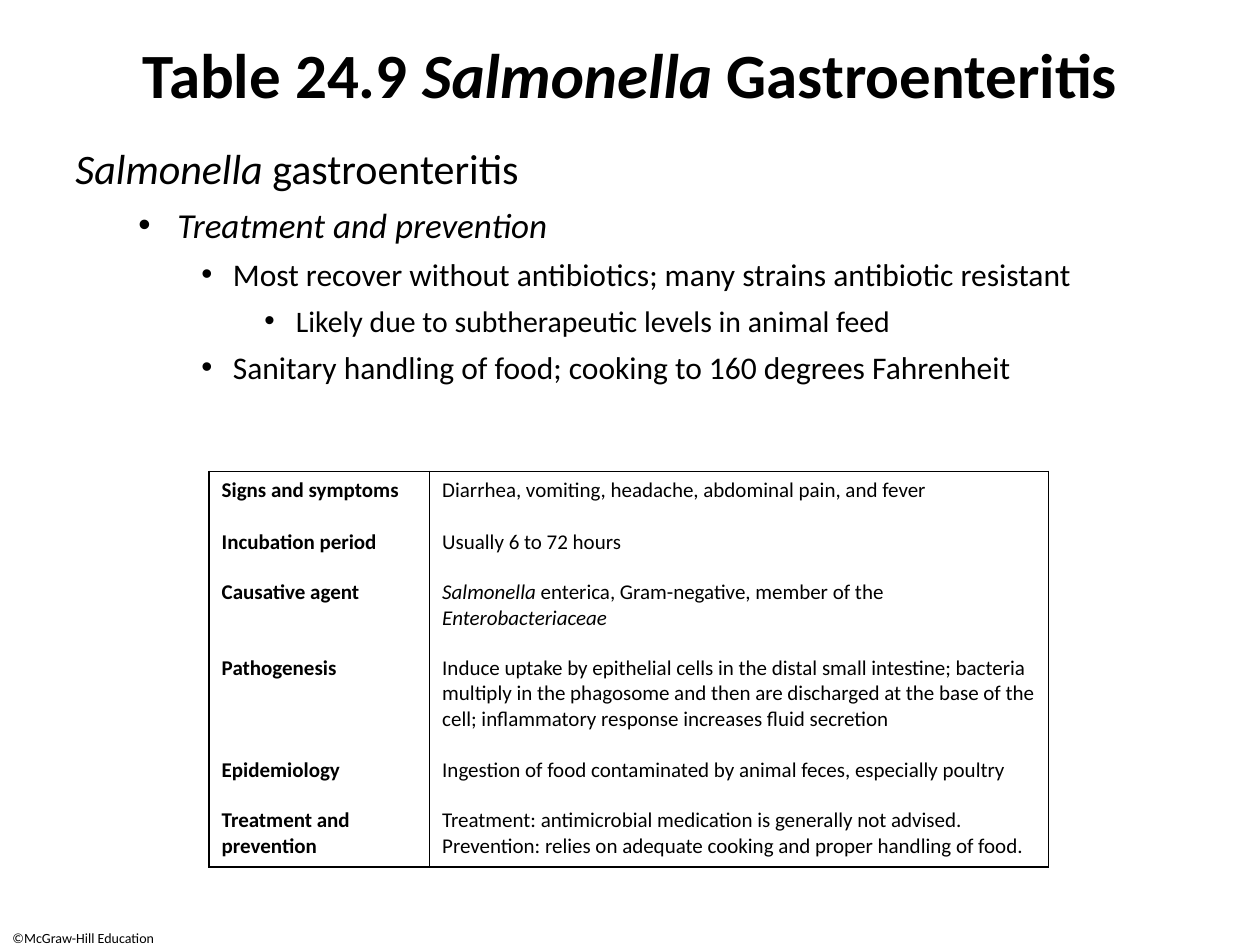
from lxml.etree import SubElement
from pptx import Presentation
from pptx.dml.color import RGBColor
from pptx.enum.text import MSO_ANCHOR, PP_ALIGN
from pptx.oxml.ns import qn
from pptx.util import Inches, Pt

FONT = "Calibri"
COLORS = {"text": "000000", "border": "000000", "background": "FFFFFF"}
LEVELS = [(24, 0, 0), (20, 0.81, -0.31), (18, 1.25, -0.25), (17, 1.75, -0.25)]

TITLE = [("Table 24.9 ", False), ("Salmonella", True), (" Gastroenteritis", False)]
OUTLINE = [
    (0, [("Salmonella", True), (" gastroenteritis", False)]),
    (1, [("Treatment and prevention", True)]),
    (2, [("Most recover without antibiotics; many strains antibiotic resistant", False)]),
    (3, [("Likely due to subtherapeutic levels in animal feed", False)]),
    (2, [("Sanitary handling of food; cooking to 160 degrees Fahrenheit", False)]),
]
COLUMN_WIDTHS = [1.75, 4.91]
ROWS = [
    (0.41, "Signs and symptoms",
     [("Diarrhea, vomiting, headache, abdominal pain, and fever", False)]),
    (0.4, "Incubation period", [("Usually 6 to 72 hours", False)]),
    (0.6, "Causative agent",
     [("Salmonella", True), (" enterica, Gram-negative, member of the ", False),
      ("Enterobacteriaceae", True)]),
    (0.81, "Pathogenesis",
     [("Induce uptake by epithelial cells in the distal small intestine; bacteria "
       "multiply in the phagosome and then are discharged at the base of the cell; "
       "inflammatory response increases fluid secretion", False)]),
    (0.4, "Epidemiology",
     [("Ingestion of food contaminated by animal feces, especially poultry", False)]),
    (0.52, "Treatment and prevention",
     [("Treatment: antimicrobial medication is generally not advised. "
       "Prevention: relies on adequate cooking and proper handling of food.", False)]),
]


def write(para, spans, size, bold=False):
    para.font.name = FONT
    para.font.size = Pt(size)
    para.font.bold = bold
    para.font.color.rgb = RGBColor.from_string(COLORS["text"])
    for text, italic in spans:
        span = para.add_run()
        span.text = text
        if italic:
            span.font.italic = True


def add_text_frame(page, box):
    frame = page.shapes.add_textbox(*map(Inches, box)).text_frame
    frame.word_wrap = True
    return frame


def place_title(page, box):
    title = page.shapes.title
    title.left, title.top, title.width, title.height = map(Inches, box)
    frame = title.text_frame
    frame.vertical_anchor = MSO_ANCHOR.MIDDLE
    para = frame.paragraphs[0]
    para.alignment = PP_ALIGN.CENTER
    write(para, TITLE, 36, bold=True)


def add_outline(page, box):
    frame = add_text_frame(page, box)
    for index, (level, spans) in enumerate(OUTLINE):
        para = frame.add_paragraph() if index else frame.paragraphs[0]
        size, margin, indent = LEVELS[level]
        para.level = level
        para.space_after = Pt(2)
        if index:
            para.space_before = Pt(round(size * 0.2, 1))
        if level:
            props = para._p.get_or_add_pPr()
            props.set("marL", str(Inches(margin)))
            props.set("indent", str(Inches(indent)))
            SubElement(props, qn("a:buFont"), typeface="Arial")
            SubElement(props, qn("a:buChar"), char="•")
        write(para, spans, size)


def set_borders(cell, sides):
    props = cell._tc.get_or_add_tcPr()
    for side in "LRTB":
        width = Pt(1) if side in sides else 0
        line = SubElement(props, qn(f"a:ln{side}"), w=str(width))
        if side in sides:
            fill = SubElement(line, qn("a:solidFill"))
            SubElement(fill, qn("a:srgbClr"), val=COLORS["border"])
        else:
            SubElement(line, qn("a:noFill"))


def add_disease_table(page, box):
    shape = page.shapes.add_table(len(ROWS), len(COLUMN_WIDTHS), *map(Inches, box))
    table = shape.table
    table.first_row = table.horz_banding = False
    for column, width in zip(table.columns, COLUMN_WIDTHS):
        column.width = Inches(width)
    for index, (height, heading, spans) in enumerate(ROWS):
        table.rows[index].height = Inches(height)
        sides = "LR" + "T" * (index == 0) + "B" * (index == len(ROWS) - 1)
        contents = [([(heading, False)], True), (spans, False)]
        for cell, (content, bold) in zip(table.rows[index].cells, contents):
            set_borders(cell, sides)
            cell.fill.background()
            write(cell.text_frame.paragraphs[0], content, 12, bold)


def add_copyright(page, box):
    frame = add_text_frame(page, box)
    write(frame.paragraphs[0], [("©McGraw-Hill Education", False)], 8)


def main():
    deck = Presentation()
    deck.slide_width, deck.slide_height = Inches(10), Inches(7.5)
    page = deck.slides.add_slide(deck.slide_layouts[5])
    page.background.fill.solid()
    page.background.fill.fore_color.rgb = RGBColor.from_string(COLORS["background"])
    add_copyright(page, (0, 7.33, 1.5, 0.17))
    place_title(page, (0, 0.25, 10, 0.67))
    add_outline(page, (0.5, 1.08, 8.33, 2.25))
    add_disease_table(page, (1.66, 3.74, 6.67, 3.15))
    deck.save("out.pptx")


if __name__ == "__main__":
    main()
